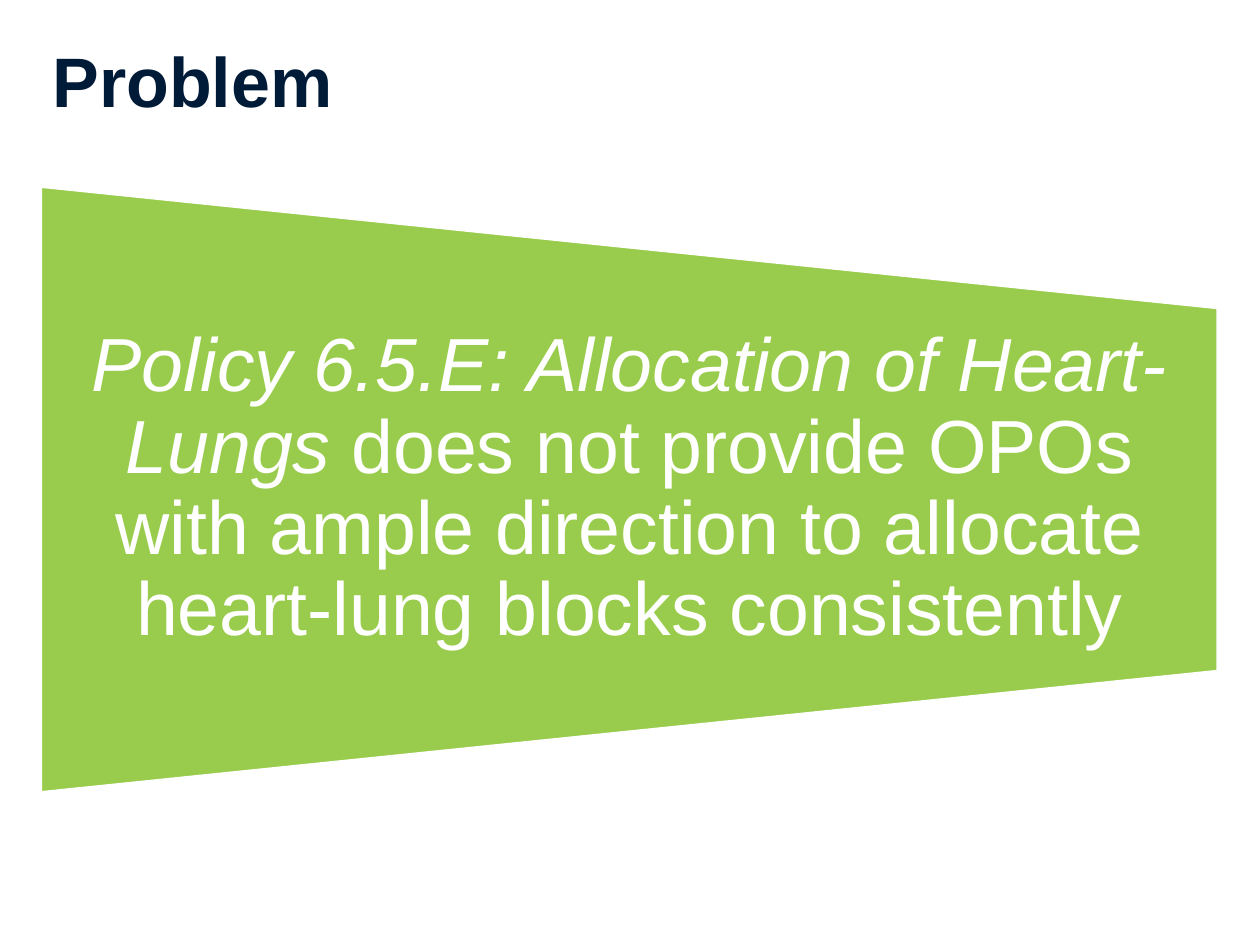
from pptx import Presentation
from pptx.dml.color import RGBColor
from pptx.enum.shapes import MSO_SHAPE
from pptx.enum.text import MSO_ANCHOR, PP_ALIGN
from pptx.util import Pt

TRAPEZOID = MSO_SHAPE.FLOWCHART_MANUAL_OPERATION
MIDDLE = MSO_ANCHOR.MIDDLE
LEFT, CENTER = PP_ALIGN.LEFT, PP_ALIGN.CENTER

FONT = "Arial"
COLORS = {"navy": "001B37", "green": "99CC4C", "white": "FFFFFF"}


def color(name):
    return RGBColor.from_string(COLORS[name])


def set_font(p, size, name, bold=False):
    p.font.name = FONT
    p.font.size = Pt(size)
    p.font.bold = bold
    p.font.color.rgb = color(name)


def add_title(s, x, y, w, h, text):
    sp = s.shapes.title
    sp.left, sp.top, sp.width, sp.height = Pt(x), Pt(y), Pt(w), Pt(h)
    tf = sp.text_frame
    tf.text = text
    tf.vertical_anchor = MIDDLE
    p = tf.paragraphs[0]
    p.alignment = LEFT
    set_font(p, 40, "navy", bold=True)


def add_statement(s, x, y, w, h, runs):
    sp = s.shapes.add_shape(TRAPEZOID, Pt(x + (w - h) / 2),
                            Pt(y + (h - w) / 2), Pt(h), Pt(w))
    sp.rotation = 270
    sp.shadow.inherit = False
    sp.fill.solid()
    sp.fill.fore_color.rgb = color("green")
    sp.line.color.rgb = color("white")
    sp.line.width = Pt(2.25)

    text_h = h * 0.6
    box = s.shapes.add_textbox(Pt(x), Pt(y + (h - text_h) / 2), Pt(w), Pt(text_h))
    tf = box.text_frame
    tf.word_wrap = True
    tf.vertical_anchor = MIDDLE
    tf.margin_left = tf.margin_right = Pt(21.6)
    tf.margin_top = tf.margin_bottom = 0
    p = tf.paragraphs[0]
    p.alignment = CENTER
    p.line_spacing = 0.9
    set_font(p, 43, "white")
    for text, italic in runs:
        r = p.add_run()
        r.text = text
        r.font.italic = italic


def main():
    prs = Presentation()
    prs.slide_width, prs.slide_height = Pt(720), Pt(540)
    s = prs.slides.add_slide(prs.slide_layouts[5])
    add_statement(s, 23, 106.2, 673.2, 347, [
        ("Policy 6.5.E: Allocation of Heart-Lungs ", True),
        ("does not provide OPOs with ample direction to allocate "
         "heart-lung blocks consistently", False),
    ])
    add_title(s, 23, 12.2, 688.3, 67, "Problem")
    prs.save("out.pptx")


if __name__ == "__main__":
    main()
